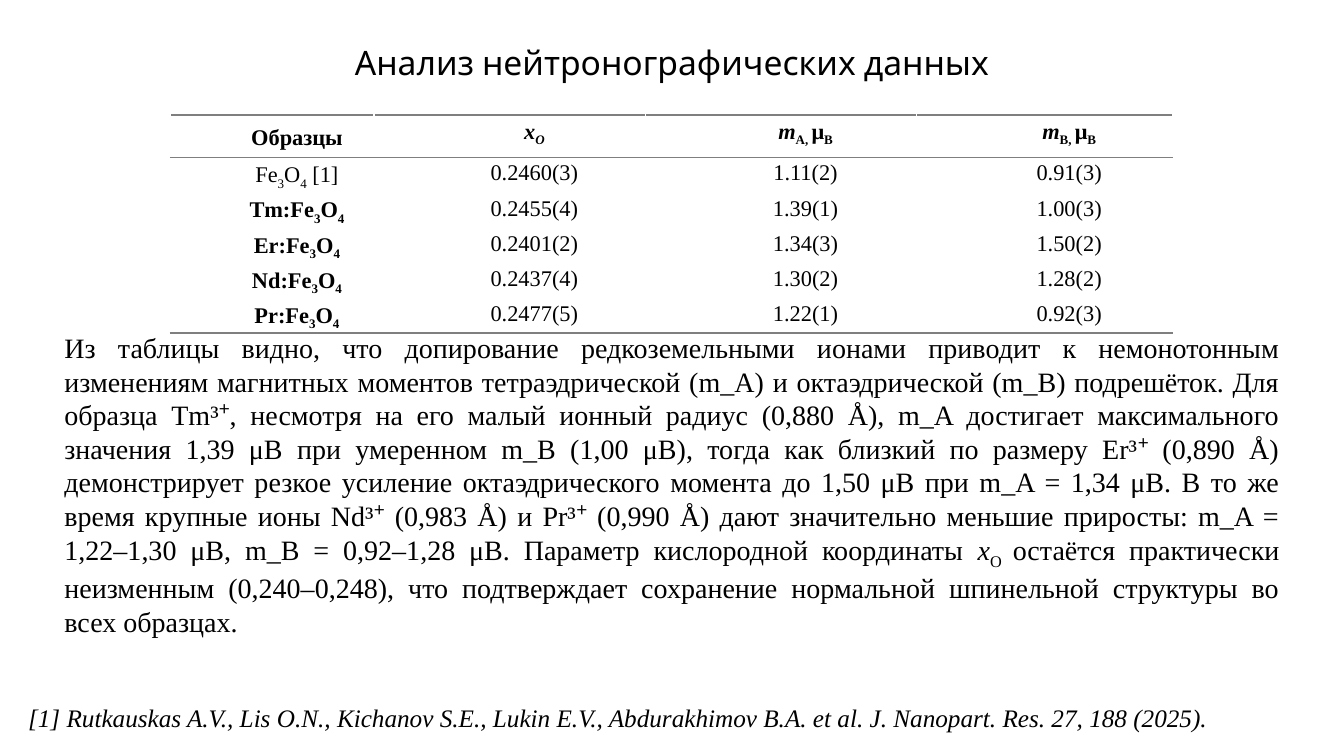
from dataclasses import dataclass

import pptx
import pptx.dml.color
import pptx.enum.text
import pptx.oxml
import pptx.oxml.ns
import pptx.presentation
import pptx.slide
import pptx.table
import pptx.text.text
import pptx.util
from pptx.util import Inches

Align = pptx.enum.text.PP_ALIGN
Anchor = pptx.enum.text.MSO_ANCHOR


@dataclass(frozen=True)
class Theme:
    ink: str = "000000"
    rule: str = "7F7F7F"
    title_font: str = "Karla"
    text_font: str = "Times New Roman"
    title_size: int = 24
    body_size: int = 20
    reference_size: int = 18
    table_size: int = 16
    rule_width: float = 1


@dataclass(frozen=True)
class Span:
    text: str
    italic: bool = False
    sub: bool = False


@dataclass(frozen=True)
class Sample:
    formula: list[Span]
    values: tuple[str, str, str]
    bold: bool = True


@dataclass(frozen=True)
class Box:
    left: float
    top: float
    width: float
    height: float

    def lengths(self) -> tuple[int, int, int, int]:
        return (Inches(self.left), Inches(self.top),
                Inches(self.width), Inches(self.height))


THEME = Theme()


def ferrite(prefix: str = "", suffix: str = "") -> list[Span]:
    """Spans of Fe3O4 with subscript digits."""
    spans = [Span(prefix + "Fe"), Span("3", sub=True), Span("O"), Span("4", sub=True)]
    return spans + [Span(suffix)] if suffix else spans


def moment(site: str) -> list[Span]:
    """Heading of a magnetic moment column, in Bohr magnetons."""
    return [Span("m", italic=True), Span(f"{site}, ", sub=True),
            Span("μ"), Span("B", sub=True)]


HEADINGS = [
    [Span("Образцы")],
    [Span("x", italic=True), Span("O", italic=True, sub=True)],
    moment("A"),
    moment("B"),
]
SAMPLES = [
    Sample(ferrite(suffix=" [1]"), ("0.2460(3)", "1.11(2)", "0.91(3)"), bold=False),
    Sample(ferrite("Tm:"), ("0.2455(4)", "1.39(1)", "1.00(3)")),
    Sample(ferrite("Er:"), ("0.2401(2)", "1.34(3)", "1.50(2)")),
    Sample(ferrite("Nd:"), ("0.2437(4)", "1.30(2)", "1.28(2)")),
    Sample(ferrite("Pr:"), ("0.2477(5)", "1.22(1)", "0.92(3)")),
]
COLUMN_WIDTHS = (2.02, 2.69, 2.69, 2.54)
HEADER_HEIGHT, ROW_HEIGHT = 0.42, 0.21

CONCLUSION = [
    Span("Из таблицы видно, что допирование редкоземельными ионами приводит к "
         "немонотонным изменениям магнитных моментов тетраэдрической (m_A) и "
         "октаэдрической (m_B) подрешёток. Для образца Tm³⁺, несмотря на его малый "
         "ионный радиус (0,880 Å), m_A достигает максимального значения 1,39 μB при "
         "умеренном m_B (1,00 μB), тогда как близкий по размеру Er³⁺ (0,890 Å) "
         "демонстрирует резкое усиление октаэдрического момента до 1,50 μB при "
         "m_A = 1,34 μB. В то же время крупные ионы Nd³⁺ (0,983 Å) и Pr³⁺ (0,990 Å) "
         "дают значительно меньшие приросты: m_A = 1,22–1,30 μB, m_B = 0,92–1,28 μB. "
         "Параметр кислородной координаты "),
    Span("x", italic=True),
    Span("O ", sub=True),
    Span("остаётся практически неизменным (0,240–0,248), что подтверждает сохранение "
         "нормальной шпинельной структуры во всех образцах."),
]
REFERENCE = [Span("[1] Rutkauskas A.V., Lis O.N., Kichanov S.E., Lukin E.V., "
                  "Abdurakhimov B.A. et al. J. Nanopart. Res. 27, 188 (2025).",
                  italic=True)]


def write(frame: pptx.text.text.TextFrame, spans: list[Span], size: float,
          align: Align, font_name: str = THEME.text_font,
          bold: bool = False) -> pptx.text.text._Paragraph:
    para = frame.paragraphs[0]
    para.alignment = align
    font = para.font
    font.name, font.size, font.bold = font_name, pptx.util.Pt(size), bold
    font.color.rgb = pptx.dml.color.RGBColor.from_string(THEME.ink)
    for span in spans:
        run = para.add_run()
        run.text = span.text
        if span.italic:
            run.font.italic = True
        if span.sub:
            run.font._element.set("baseline", "-25000")
    return para


def add_title(page: pptx.slide.Slide, box: Box, text: str) -> None:
    title = page.shapes.title
    title.left, title.top, title.width, title.height = box.lengths()
    frame = title.text_frame
    frame.word_wrap = True
    frame.vertical_anchor = Anchor.TOP
    frame.auto_size = pptx.enum.text.MSO_AUTO_SIZE.SHAPE_TO_FIT_TEXT
    write(frame, [Span(text)], THEME.title_size, Align.CENTER, THEME.title_font)


def add_text(page: pptx.slide.Slide, box: Box, spans: list[Span],
             size: float, align: Align) -> None:
    frame = page.shapes.add_textbox(*box.lengths()).text_frame
    frame.word_wrap = True
    write(frame, spans, size, align)


def add_rule(cell: pptx.table._Cell, side: str) -> None:
    """Draw a cell border; side is lnT or lnB."""
    width = pptx.util.Pt(THEME.rule_width)
    cell._tc.get_or_add_tcPr().append(pptx.oxml.parse_xml(
        f'<a:{side} {pptx.oxml.ns.nsdecls("a")} w="{width}"><a:solidFill>'
        f'<a:srgbClr val="{THEME.rule}"/></a:solidFill></a:{side}>'))


def fill_cell(cell: pptx.table._Cell, spans: list[Span], bold: bool,
              centred: bool, rules: tuple[str, ...]) -> None:
    for side in rules:
        add_rule(cell, side)
    cell.fill.background()
    cell.margin_left = cell.margin_right = Inches(0.07)
    cell.margin_top = cell.margin_bottom = 0
    cell.vertical_anchor = Anchor.MIDDLE if centred else Anchor.TOP
    para = write(cell.text_frame, spans, THEME.table_size, Align.CENTER, bold=bold)
    para.line_spacing = 1.15
    properties = para._p.get_or_add_pPr()
    properties.set("marL", "0")
    properties.set("indent", str(Inches(0.49)))


def add_samples_table(page: pptx.slide.Slide, left: float, top: float) -> None:
    box = Box(left, top, sum(COLUMN_WIDTHS), HEADER_HEIGHT + ROW_HEIGHT * len(SAMPLES))
    table = page.shapes.add_table(
        len(SAMPLES) + 1, len(COLUMN_WIDTHS), *box.lengths()).table
    table.first_row = table.horz_banding = False
    for column, width in zip(table.columns, COLUMN_WIDTHS):
        column.width = Inches(width)
    for index, row in enumerate(table.rows):
        row.height = Inches(ROW_HEIGHT if index else HEADER_HEIGHT)

    for column, heading in enumerate(HEADINGS):
        fill_cell(table.cell(0, column), heading, True, column == 0, ("lnT", "lnB"))
    for row, sample in enumerate(SAMPLES, start=1):
        rules = {1: ("lnT",), len(SAMPLES): ("lnB",)}.get(row, ())
        fill_cell(table.cell(row, 0), sample.formula, sample.bold, True, rules)
        for column, value in enumerate(sample.values, start=1):
            fill_cell(table.cell(row, column), [Span(value)], False, False, rules)


def main() -> None:
    deck = pptx.Presentation()
    deck.slide_width, deck.slide_height = Inches(13.33), Inches(7.5)
    page = deck.slides.add_slide(deck.slide_layouts.get_by_name("Title Only"))
    add_title(page, Box(3.32, 0.37, 6.69, 0.5), "Анализ нейтронографических данных")
    add_text(page, Box(0.54, 3.23, 12.25, 3.1), CONCLUSION, THEME.body_size, Align.JUSTIFY)
    add_samples_table(page, 1.69, 1.14)
    add_text(page, Box(0.18, 6.92, 13.11, 0.4), REFERENCE, THEME.reference_size, Align.LEFT)
    deck.save("out.pptx")


if __name__ == "__main__":
    main()
